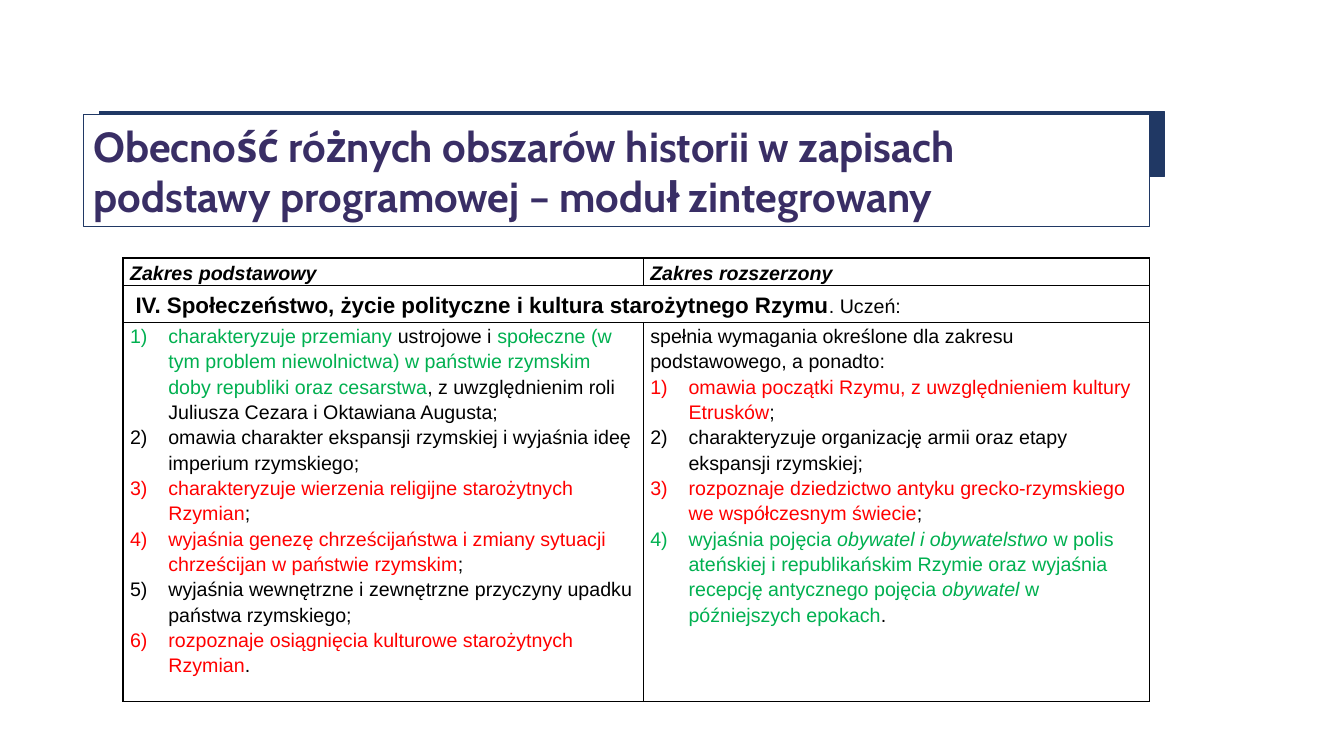
from lxml import etree
from pptx import Presentation
from pptx.dml.color import RGBColor
from pptx.enum.shapes import MSO_SHAPE
from pptx.enum.text import MSO_ANCHOR, MSO_AUTO_SIZE, PP_ALIGN
from pptx.oxml.ns import qn
from pptx.util import Inches, Pt

RECTANGLE = MSO_SHAPE.RECTANGLE
TOP, MIDDLE = MSO_ANCHOR.TOP, MSO_ANCHOR.MIDDLE
LEFT = PP_ALIGN.LEFT
NO_AUTOFIT = MSO_AUTO_SIZE.NONE

COLORS = {
    "navy": "203864",
    "violet": "392E65",
    "white": "FFFFFF",
    "black": "000000",
    "green": "00B050",
    "red": "FF0000",
}


def rgb(name):
    return RGBColor.from_string(COLORS[name])


def write_paragraph(paragraph, runs, numbered=False):
    """Each run is (text, colour, style, size); the last two may be left out."""
    paragraph.alignment = LEFT
    paragraph.line_spacing = 1.15
    if numbered:
        properties = paragraph._p.get_or_add_pPr()
        properties.set("marL", str(Inches(0.38)))
        properties.set("indent", str(-Inches(0.38)))
        etree.SubElement(properties, qn("a:buFont"), typeface="+mj-lt")
        etree.SubElement(properties, qn("a:buAutoNum"), type="arabicParenR")
    for text, color, *options in runs:
        style = options[0] if options else ""
        run = paragraph.add_run()
        run.text = text
        run.font.name = "Arial"
        run.font.size = Pt(options[1] if len(options) > 1 else 14)
        run.font.bold = "b" in style
        run.font.italic = "i" in style
        run.font.color.rgb = rgb(color)


prs = Presentation()
prs.slide_width, prs.slide_height = Inches(13.33), Inches(7.5)
slide = prs.slides.add_slide(prs.slide_layouts[5])

# Title panel with a navy band behind it
band = slide.shapes.add_shape(RECTANGLE, Inches(0.99), Inches(1.11), Inches(10.56), Inches(0.64))
band.shadow.inherit = False
title = slide.shapes.title
title.left, title.top, title.width, title.height = (
    Inches(0.83), Inches(1.14), Inches(10.57), Inches(1.11))
title._element.addprevious(band._element)
for panel, fill in ((band, "navy"), (title, "white")):
    panel.fill.solid()
    panel.fill.fore_color.rgb = rgb(fill)
    panel.line.color.rgb = rgb("navy")
    panel.line.width = Pt(0.75)

title_frame = title.text_frame
title_frame.word_wrap = True
title_frame.auto_size = NO_AUTOFIT
title_frame.vertical_anchor = MIDDLE
heading = title_frame.paragraphs[0]
heading.alignment = LEFT
heading_run = heading.add_run()
heading_run.text = "Obecność różnych obszarów historii w zapisach podstawy programowej – moduł zintegrowany"
heading_run.font.name = "Cabin"
heading_run.font.size = Pt(30)
heading_run.font.bold = True
heading_run.font.color.rgb = rgb("violet")

# Requirements by level
basic_requirements = [
    [("charakteryzuje przemiany", "green"), (" ustrojowe i ", "black"),
     ("społeczne (w tym problem niewolnictwa) w państwie rzymskim doby republiki oraz cesarstwa", "green"),
     (", z uwzględnienim roli Juliusza Cezara i Oktawiana Augusta;", "black")],
    [("omawia charakter ekspansji rzymskiej i wyjaśnia ideę imperium rzymskiego;", "black")],
    [("charakteryzuje wierzenia religijne starożytnych Rzymian", "red"), (";", "black")],
    [("wyjaśnia genezę chrześcijaństwa i zmiany sytuacji chrześcijan w państwie rzymskim", "red"),
     (";", "black")],
    [("wyjaśnia wewnętrzne i zewnętrzne przyczyny upadku państwa rzymskiego;", "black")],
    [("rozpoznaje osiągnięcia kulturowe starożytnych Rzymian", "red"), (".", "black")],
]
extended_intro = [("spełnia wymagania określone dla zakresu podstawowego, a ponadto:", "black")]
extended_requirements = [
    [("omawia początki Rzymu, z uwzględnieniem kultury Etrusków", "red"), (";", "black")],
    [("charakteryzuje organizację armii oraz etapy ekspansji rzymskiej;", "black")],
    [("rozpoznaje dziedzictwo antyku grecko-rzymskiego we współczesnym świecie", "red"),
     (";", "black")],
    [("wyjaśnia pojęcia ", "green"), ("obywatel i obywatelstwo ", "green", "i"),
     ("w polis ateńskiej i republikańskim Rzymie oraz wyjaśnia recepcję antycznego pojęcia ", "green"),
     ("obywatel ", "green", "i"), ("w późniejszych epokach", "green"), (".", "black")],
]
section = [(" ", "black"),
           ("IV. Społeczeństwo, życie polityczne i kultura starożytnego Rzymu", "black", "b", 16),
           (". Uczeń:", "black")]

# Each cell holds its plain paragraphs, then its numbered ones
contents = {
    (0, 0): ([[("Zakres podstawowy", "black", "bi")]], []),
    (0, 1): ([[("Zakres rozszerzony", "black", "bi")]], []),
    (1, 0): ([section], []),
    (2, 0): ([], basic_requirements),
    (2, 1): ([extended_intro], extended_requirements),
}

# Table
requirements = slide.shapes.add_table(
    3, 2, Inches(1.22), Inches(2.56), Inches(10.18), Inches(4.4)).table
requirements.first_row = False
requirements.horz_banding = False
for column, width in zip(requirements.columns, (5.16, 5.02)):
    column.width = Inches(width)
for row, height in zip(requirements.rows, (0.27, 0.37, 3.76)):
    row.height = Inches(height)
requirements.cell(1, 0).merge(requirements.cell(1, 1))

for row in range(3):
    for column in range(2):
        cell = requirements.cell(row, column)
        cell.margin_left = cell.margin_right = Inches(0.07)
        cell.margin_top = cell.margin_bottom = 0
        cell.vertical_anchor = TOP if row == 2 else MIDDLE

        # Thin black borders, placed ahead of the fill
        cell_properties = cell._tc.get_or_add_tcPr()
        for side in ("a:lnL", "a:lnR", "a:lnT", "a:lnB"):
            border = etree.SubElement(cell_properties, qn(side), w=str(Pt(1)))
            border_fill = etree.SubElement(border, qn("a:solidFill"))
            etree.SubElement(border_fill, qn("a:srgbClr"), val=COLORS["black"])
        cell.fill.background()

        # Text
        plain, numbered = contents.get((row, column), ([], []))
        for index, runs in enumerate(plain + numbered):
            frame = cell.text_frame
            paragraph = frame.add_paragraph() if index else frame.paragraphs[0]
            write_paragraph(paragraph, runs, index >= len(plain))

prs.save("out.pptx")
